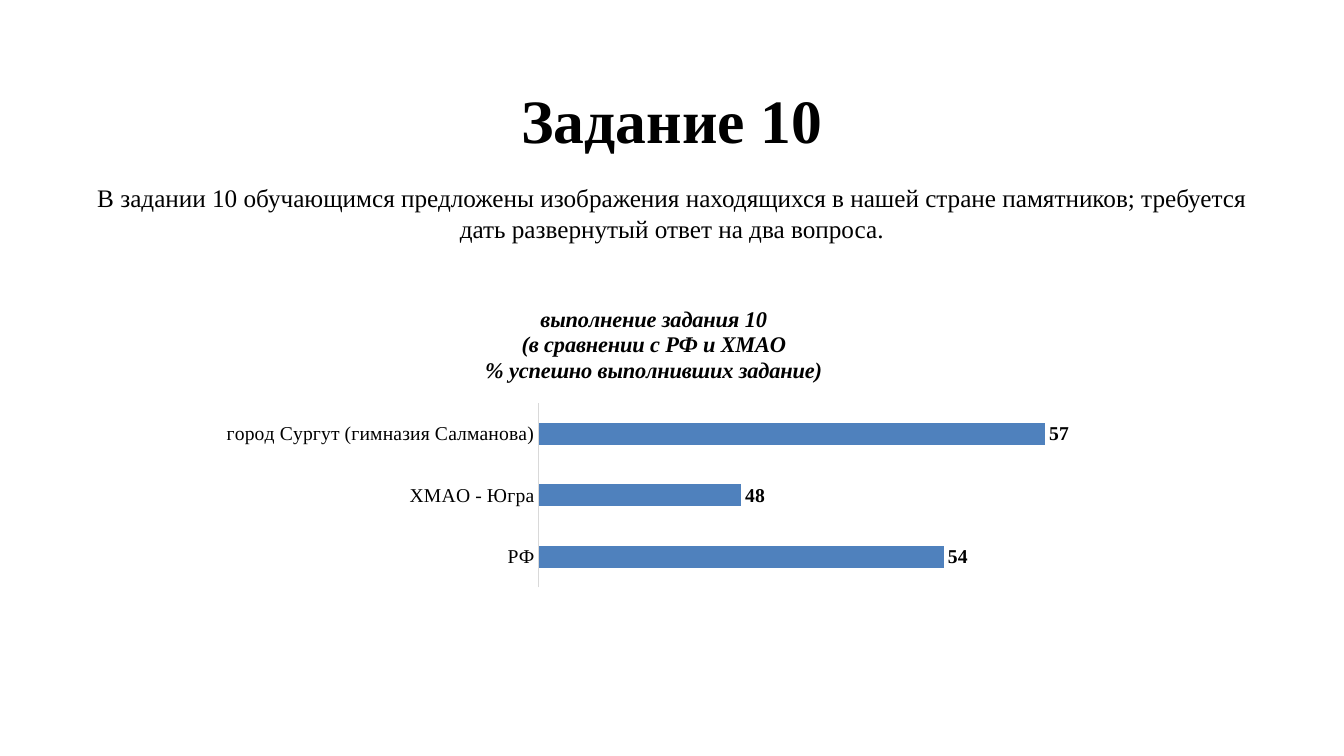
from lxml import etree
from pptx import Presentation
from pptx.chart.data import CategoryChartData
from pptx.dml.color import RGBColor
from pptx.enum.chart import XL_CHART_TYPE, XL_LABEL_POSITION, XL_TICK_MARK
from pptx.enum.text import MSO_ANCHOR, PP_ALIGN
from pptx.oxml.ns import qn
from pptx.util import Pt

BAR_CLUSTERED = XL_CHART_TYPE.BAR_CLUSTERED
OUTSIDE_END = XL_LABEL_POSITION.OUTSIDE_END
NO_TICK = XL_TICK_MARK.NONE
CENTER = PP_ALIGN.CENTER
TOP = MSO_ANCHOR.TOP
MIDDLE = MSO_ANCHOR.MIDDLE

FONT = "Times New Roman"
BLACK = "000000"
BLUE = "4F81BD"
LIGHT_GRAY = "D9D9D9"

TASK_TEXT = (
    "В задании 10 обучающимся предложены изображения находящихся в нашей "
    "стране памятников; требуется дать развернутый ответ на два вопроса."
)
CHART_TITLE = [
    "выполнение задания 10",
    "(в сравнении с РФ и ХМАО",
    "% успешно выполнивших задание)",
]
RESULTS = {"РФ": 54, "ХМАО - Югра": 48, "город Сургут (гимназия Салманова)": 57}


def color(value):
    return RGBColor.from_string(value)


def set_font(font, size, bold=False, italic=False):
    font.name = FONT
    font.size = Pt(size)
    font.bold = bold
    font.italic = italic
    font.color.rgb = color(BLACK)


def add_text(slide, text, left, top, width, height, size, bold=False, anchor=TOP):
    box = slide.shapes.add_textbox(Pt(left), Pt(top), Pt(width), Pt(height))
    frame = box.text_frame
    frame.word_wrap = True
    frame.vertical_anchor = anchor
    paragraph = frame.paragraphs[0]
    paragraph.text = text
    paragraph.alignment = CENTER
    set_font(paragraph.font, size, bold)


def set_chart_title(chart, lines):
    frame = chart.chart_title.text_frame
    frame.text = "\n".join(lines)
    for paragraph in frame.paragraphs:
        paragraph.alignment = CENTER
        set_font(paragraph.font, 16, bold=True, italic=True)
    chart.chart_title.include_in_layout = False


def set_plot_layout(chart, x, y, w, h):
    plot_area = chart.plots[0]._element.getparent()
    for old_layout in plot_area.findall(qn("c:layout")):
        plot_area.remove(old_layout)
    layout = etree.Element(qn("c:layout"))
    plot_area.insert(0, layout)
    manual = etree.SubElement(layout, qn("c:manualLayout"))
    settings = {"layoutTarget": "inner", "xMode": "edge", "yMode": "edge",
                "x": x, "y": y, "w": w, "h": h}
    for name, value in settings.items():
        etree.SubElement(manual, qn(f"c:{name}")).set("val", str(value))


def add_bar_chart(slide, results, left, top, width, height):
    data = CategoryChartData()
    data.categories = list(results)
    data.add_series("Series 1", list(results.values()))
    frame = slide.shapes.add_chart(
        BAR_CLUSTERED, Pt(left), Pt(top), Pt(width), Pt(height), data)
    chart = frame.chart
    set_font(chart.font, 14)
    chart.has_legend = False
    set_chart_title(chart, CHART_TITLE)
    set_plot_layout(chart, 0.37, 0.37, 0.61, 0.61)

    category_axis = chart.category_axis
    category_axis.major_tick_mark = NO_TICK
    category_axis.format.line.color.rgb = color(LIGHT_GRAY)
    category_axis.format.line.width = Pt(0.75)
    set_font(category_axis.tick_labels.font, 14)
    value_axis = chart.value_axis
    value_axis.minimum_scale = 42
    value_axis.maximum_scale = 58
    value_axis.has_major_gridlines = False
    value_axis.visible = False

    plot = chart.plots[0]
    plot.gap_width = 182
    plot.vary_by_categories = False
    series = plot.series[0]
    series.format.fill.solid()
    series.format.fill.fore_color.rgb = color(BLUE)
    labels = series.data_labels
    labels.show_value = True
    labels.position = OUTSIDE_END
    set_font(labels.font, 14, bold=True)


def main():
    presentation = Presentation()
    presentation.slide_width = Pt(960)
    presentation.slide_height = Pt(540)
    slide = presentation.slides.add_slide(presentation.slide_layouts[6])
    add_text(slide, "Задание 10", 48, 58, 864, 54, 44, bold=True, anchor=MIDDLE)
    add_text(slide, TASK_TEXT, 48, 127, 864, 356, 18)
    add_bar_chart(slide, RESULTS, 150.5, 208, 633, 216)
    presentation.save("out.pptx")


if __name__ == "__main__":
    main()
